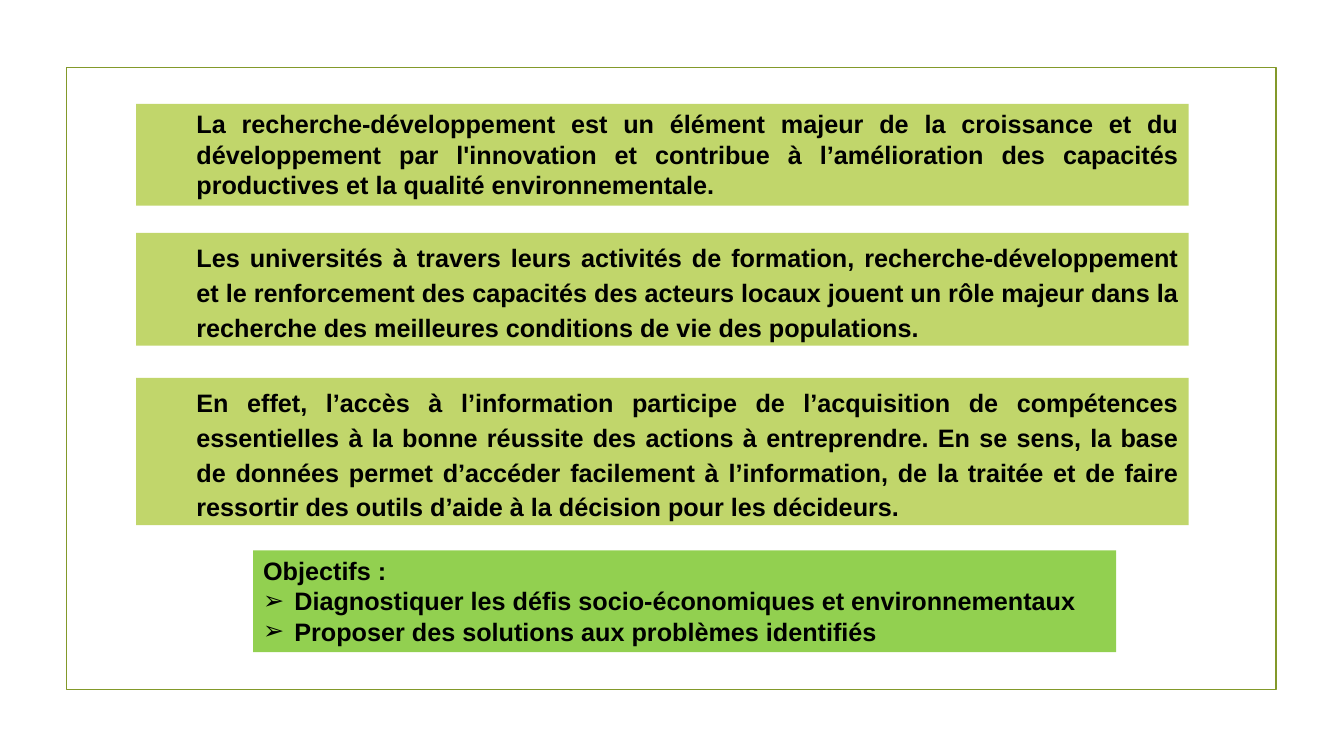
from lxml.etree import SubElement
from pptx import Presentation
from pptx.dml.color import RGBColor
from pptx.enum.shapes import MSO_SHAPE
from pptx.enum.text import MSO_ANCHOR, MSO_AUTO_SIZE, PP_ALIGN
from pptx.oxml.ns import qn
from pptx.util import Inches, Pt

OLIVE = RGBColor(0x83, 0x99, 0x2A)
LIME = RGBColor(0xC1, 0xD6, 0x6B)
GREEN = RGBColor(0x92, 0xD0, 0x50)
BLACK = RGBColor(0x00, 0x00, 0x00)

PLAIN = {"space_before": Pt(0), "space_after": Pt(0), "line_spacing": 1.0}
JUSTIFIED = {**PLAIN, "alignment": PP_ALIGN.JUSTIFY}
AIRY = {**JUSTIFIED, "space_after": Pt(6), "line_spacing": 1.15}
LEFT = {**PLAIN, "alignment": PP_ALIGN.LEFT}

# top, height, paragraph format, wording
STATEMENTS = [
    (1.03, 1.01, JUSTIFIED,
     "La recherche-développement est un élément majeur de la croissance et du "
     "développement par l'innovation et contribue à l’amélioration des capacités "
     "productives et la qualité environnementale."),
    (2.31, 1.12, AIRY,
     "Les universités à travers leurs activités de formation, "
     "recherche-développement et le renforcement des capacités des acteurs locaux "
     "jouent un rôle majeur dans la recherche des meilleures conditions de vie des "
     "populations."),
    (3.75, 1.46, AIRY,
     "En effet, l’accès à l’information participe de l’acquisition de compétences "
     "essentielles à la bonne réussite des actions à entreprendre. En se sens, la "
     "base de données permet d’accéder facilement à l’information, de la traitée et "
     "de faire ressortir des outils d’aide à la décision pour les décideurs."),
]
OBJECTIVES = [
    "Diagnostiquer les défis socio-économiques et environnementaux",
    "Proposer des solutions aux problèmes identifiés",
]


def apply(target, settings):
    for name, value in settings.items():
        setattr(target, name, value)


class SlideBuilder:
    font = {"name": "Arial", "size": Pt(18), "bold": True}
    frame_format = {"word_wrap": True, "vertical_anchor": MSO_ANCHOR.TOP,
                    "auto_size": MSO_AUTO_SIZE.NONE}

    def __init__(self, slide):
        self.slide = slide

    def rectangle(self, left, top, width, height):
        rectangle = self.slide.shapes.add_shape(
            MSO_SHAPE.RECTANGLE, Inches(left), Inches(top),
            Inches(width), Inches(height))
        rectangle.shadow.inherit = False
        return rectangle

    def border(self, left, top, width, height):
        border = self.rectangle(left, top, width, height)
        border.fill.background()
        border.line.color.rgb = OLIVE
        border.line.width = Pt(1.25)

    def paragraph(self, paragraph, wording, settings, margin=0, indent=0, bullet=None):
        properties = paragraph._p.get_or_add_pPr()
        properties.set("marL", str(Inches(margin)))
        properties.set("indent", str(Inches(indent)))
        if bullet:
            SubElement(properties, qn("a:buChar")).set("char", bullet)
        else:
            SubElement(properties, qn("a:buNone"))
        apply(paragraph, settings)
        run = paragraph.add_run()
        run.text = wording
        apply(run.font, self.font)
        run.font.color.rgb = BLACK

    def statement(self, top, height, settings, wording):
        panel = self.rectangle(1.35, top, 10.44, height)
        panel.fill.solid()
        panel.fill.fore_color.rgb = LIME
        panel.line.fill.background()
        apply(panel.text_frame, self.frame_format)
        self.paragraph(panel.text_frame.paragraphs[0], wording, settings, margin=0.5)

    def objectives(self, heading, items):
        body = self.slide.placeholders[1]
        apply(body, {"left": Inches(2.51), "top": Inches(5.46),
                     "width": Inches(8.56), "height": Inches(1.01)})
        body.fill.solid()
        body.fill.fore_color.rgb = GREEN
        apply(body.text_frame, self.frame_format)
        self.paragraph(body.text_frame.paragraphs[0], heading, LEFT)
        for item in items:
            self.paragraph(body.text_frame.add_paragraph(), item, LEFT,
                           margin=0.31, indent=-0.31, bullet="➢")


def main():
    presentation = Presentation()
    presentation.slide_width = Inches(13.33)
    presentation.slide_height = Inches(7.5)
    slide = presentation.slides.add_slide(presentation.slide_layouts[1])
    unused_title = slide.shapes.title.element
    unused_title.getparent().remove(unused_title)

    builder = SlideBuilder(slide)
    builder.border(0.66, 0.67, 12, 6.17)
    for statement in STATEMENTS:
        builder.statement(*statement)
    builder.objectives("Objectifs :", OBJECTIVES)
    presentation.save("out.pptx")


if __name__ == "__main__":
    main()
